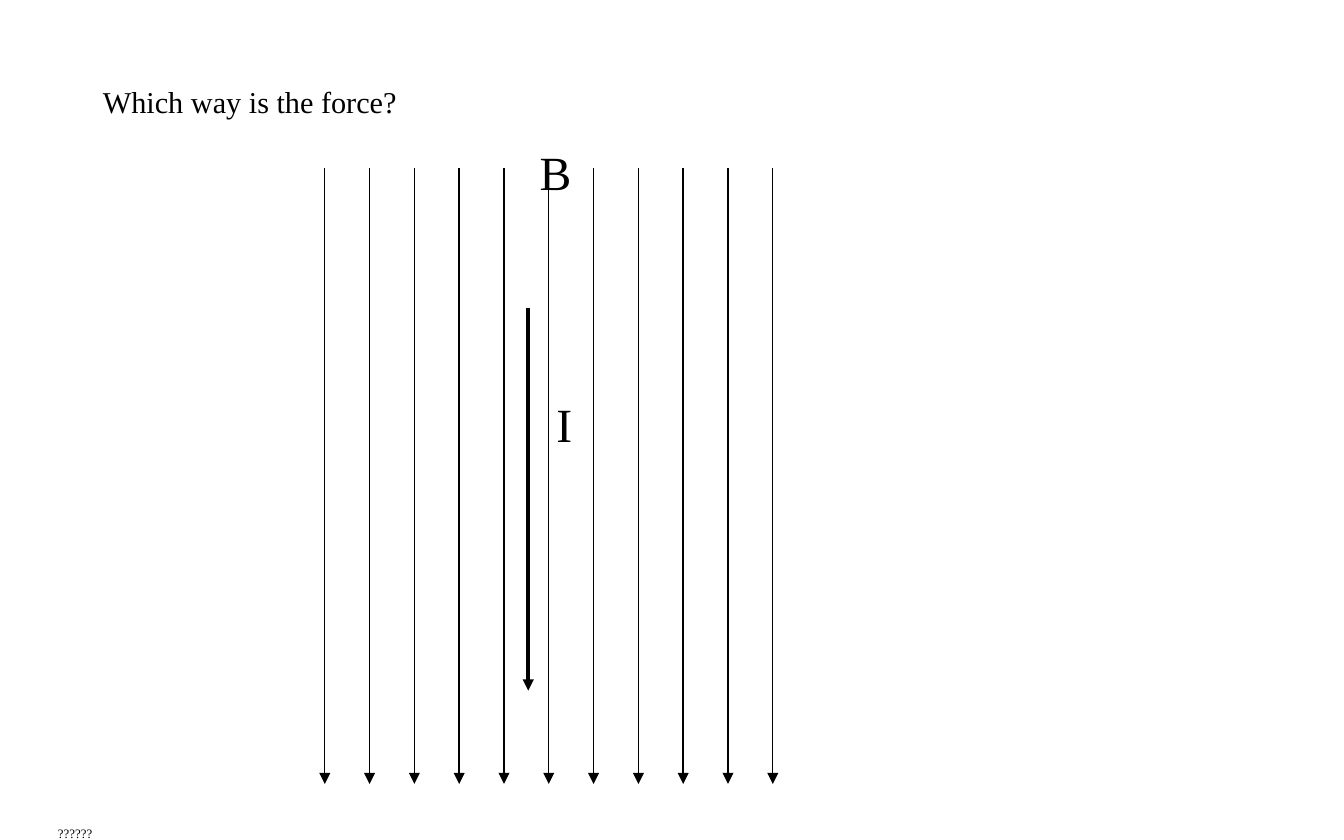
from pptx import Presentation
from pptx.dml.color import RGBColor
from pptx.enum.shapes import MSO_CONNECTOR as CONN
from pptx.enum.text import MSO_AUTO_SIZE as AUTO
from pptx.oxml.ns import qn
from pptx.util import Pt
from lxml.etree import SubElement

COLORS = {"ink": "000000"}
FONT = "Times New Roman"
INK = RGBColor.from_string(COLORS["ink"])
SUBSCRIPT = "-33000"


def add_label(shapes, text, x, y, w, h, size):
    """Add a one-line text box set as subscript."""
    tf = shapes.add_textbox(Pt(x), Pt(y), Pt(w), Pt(h)).text_frame
    for name, value in {"word_wrap": False, "auto_size": AUTO.SHAPE_TO_FIT_TEXT}.items():
        setattr(tf, name, value)
    r = tf.paragraphs[0].add_run()
    r.text = text
    for name, value in {"name": FONT, "size": Pt(size)}.items():
        setattr(r.font, name, value)
    r.font.color.rgb = INK
    r._r.get_or_add_rPr().set("baseline", SUBSCRIPT)


def add_down_arrow(shapes, x, top, bottom, width):
    """Add a vertical line with a triangle head at its bottom."""
    line = shapes.add_connector(CONN.STRAIGHT, Pt(x), Pt(top), Pt(x), Pt(bottom))
    line.line.width = Pt(width)
    line.line.color.rgb = INK
    SubElement(line.line._get_or_add_ln(), qn("a:tailEnd"), type="triangle")
    SubElement(line._element.spPr, qn("a:effectLst"))


def add_field(shapes, left, gap, count, top, bottom):
    """Add a group of evenly spaced field lines."""
    group = shapes.add_group_shape()
    for i in range(count):
        add_down_arrow(group.shapes, left + i * gap, top, bottom, 0.75)


def main():
    """Build and save the slide."""
    prs = Presentation()
    prs.slide_width, prs.slide_height = Pt(720), Pt(450)
    shapes = prs.slides.add_slide(prs.slide_layouts[6]).shapes
    add_label(shapes, "Which way is the force?", 48, 20, 289.5, 41, 28)
    add_label(shapes, "??????", 24, 430, 47, 21.6, 12)
    add_label(shapes, "I", 291, 175, 29.5, 60.5, 44)
    add_field(shapes, left=174, gap=24, count=11, top=90, bottom=420)
    add_label(shapes, "B", 282, 40, 44, 60.5, 44)
    add_down_arrow(shapes, 283, 165, 370, 2)
    prs.save("out.pptx")


if __name__ == "__main__":
    main()
